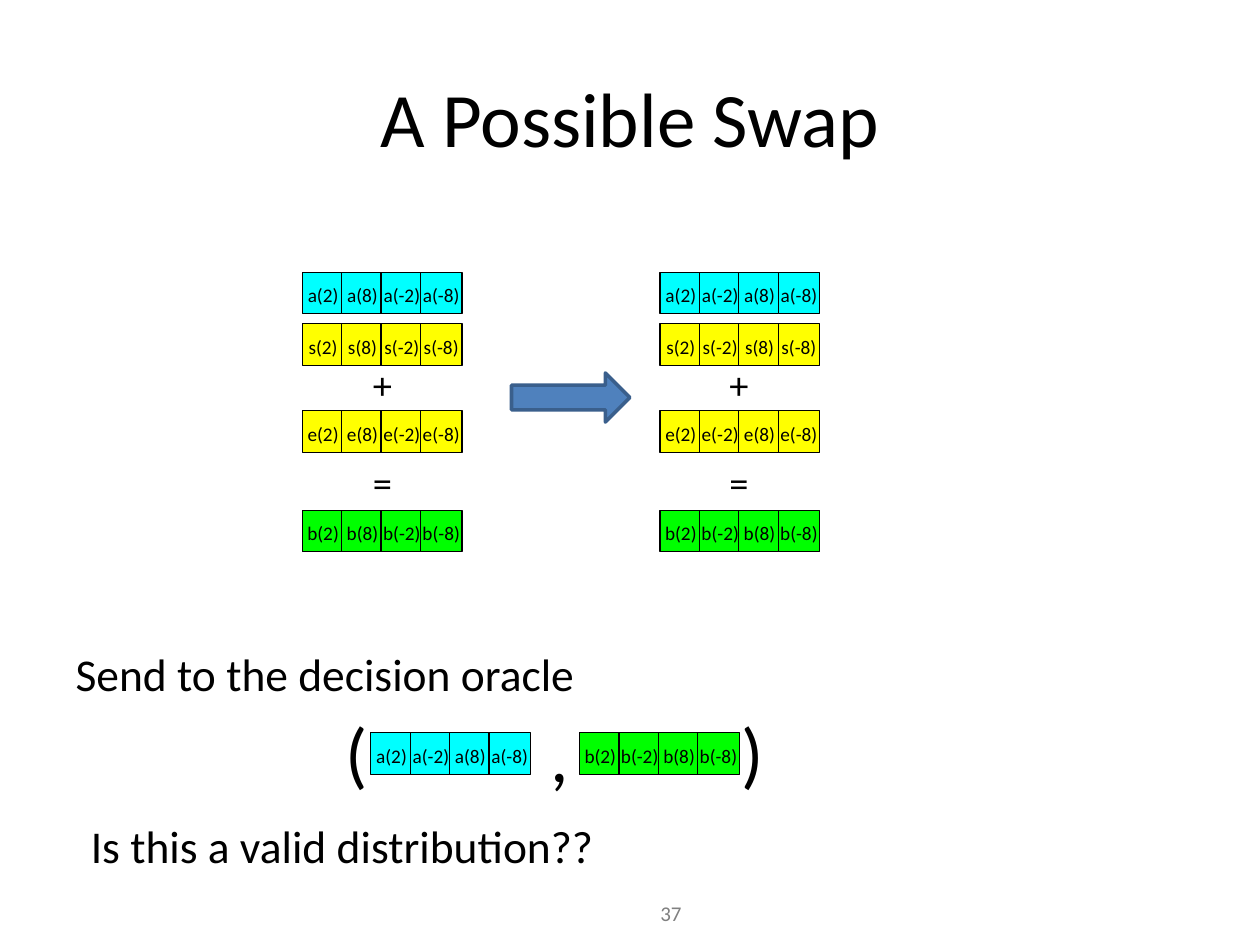
from dataclasses import dataclass

from pptx import Presentation
from pptx.dml.color import RGBColor
from pptx.enum.shapes import MSO_SHAPE as Shape
from pptx.enum.text import MSO_ANCHOR as Anchor, PP_ALIGN as Align
from pptx.util import Pt


@dataclass(frozen=True)
class Theme:
    font: str = "Calibri"
    ink: str = "000000"
    muted: str = "808080"
    cyan: str = "00FFFF"
    yellow: str = "FFFF00"
    green: str = "00FF00"
    arrow: str = "4F81BD"
    arrow_edge: str = "3A5F8C"
    title: int = 44
    bracket: int = 42
    body: int = 26
    operator: int = 22
    number: int = 12
    cell: int = 11


THEME = Theme()
CELL_SIZE = 23.76
CELL_STEP = 22.5
BEFORE = ("2", "8", "-2", "-8")
AFTER = ("2", "-2", "8", "-8")


def rgb(value):
    return RGBColor.from_string(value)


def write(shape, text, size, color=THEME.ink, align=Align.LEFT, anchor=Anchor.TOP,
          wrap=True, inset=(7.2, 3.6), spacing=None):
    frame = shape.text_frame
    frame.word_wrap = wrap
    frame.vertical_anchor = anchor
    frame.margin_left = frame.margin_right = Pt(inset[0])
    frame.margin_top = frame.margin_bottom = Pt(inset[1])
    para = frame.paragraphs[0]
    para.alignment = align
    if spacing:
        para.line_spacing = spacing
    span = para.add_run()
    span.text = text
    span.font.name = THEME.font
    span.font.size = Pt(size)
    span.font.color.rgb = rgb(color)


def add_text(page, text, left, top, width, height, **style):
    box = page.shapes.add_textbox(Pt(left), Pt(top), Pt(width), Pt(height))
    write(box, text, **style)


def add_block(page, kind, left, top, width, height, fill, line, weight):
    block = page.shapes.add_shape(kind, Pt(left), Pt(top), Pt(width), Pt(height))
    block.shadow.inherit = False
    block.fill.solid()
    block.fill.fore_color.rgb = rgb(fill)
    block.line.color.rgb = rgb(line)
    block.line.width = Pt(weight)
    return block


def add_vector(page, name, points, left, top, fill):
    for index, point in enumerate(points):
        cell = add_block(page, Shape.RECTANGLE, left + index * CELL_STEP, top,
                         CELL_SIZE, CELL_SIZE, fill, THEME.ink, 0.75)
        write(cell, f"{name}({point})", THEME.cell, align=Align.CENTER,
              anchor=Anchor.MIDDLE, wrap=False, inset=(6.5, 3), spacing=1.17)


def add_equation(page, points, left, operator_left):
    rows = (("a", 155.6, THEME.cyan), ("s", 185, THEME.yellow),
            ("e", 234.7, THEME.yellow), ("b", 291.6, THEME.green))
    for name, top, fill in rows:
        add_vector(page, name, points, left, top, fill)
    for sign, top in (("+", 202.7), ("=", 258.5)):
        add_text(page, sign, operator_left, top, 29.5, 33.8, size=THEME.operator)


def add_pair(page):
    add_vector(page, "a", AFTER, 211.9, 418.8, THEME.cyan)
    add_vector(page, "b", AFTER, 331.2, 418.8, THEME.green)
    for mark, left, top in (("(", 190.1, 400.3), (",", 307.4, 401.8), (")", 416.9, 400.3)):
        add_text(page, mark, left, top, 28.1, 58.3, size=THEME.bracket)


def add_title(page, text):
    title = page.shapes.title
    title.left, title.top, title.width, title.height = Pt(36), Pt(21.6), Pt(648), Pt(90)
    write(title, text, THEME.title, align=Align.CENTER, anchor=Anchor.MIDDLE)


def main():
    deck = Presentation()
    deck.slide_width, deck.slide_height = Pt(720), Pt(540)
    page = deck.slides.add_slide(deck.slide_layouts[5])
    add_title(page, "A Possible Swap")
    add_equation(page, BEFORE, 172.8, 206)
    add_equation(page, AFTER, 377.2, 409.7)
    add_block(page, Shape.RIGHT_ARROW, 292.3, 213.1, 67.7, 28.1,
              THEME.arrow, THEME.arrow_edge, 2)
    add_pair(page)
    for text, left, top in (("Send to the decision oracle", 36.7, 360.7),
                            ("Is this a valid distribution??", 45.4, 459.4)):
        add_text(page, text, left, top, 428.4, 29.5, size=THEME.body,
                 inset=(6.5, 3), spacing=1.17)
    add_text(page, "37", 339.1, 511.2, 88.6, 28.8, size=THEME.number,
             color=THEME.muted, align=Align.CENTER)
    deck.save("out.pptx")


if __name__ == "__main__":
    main()
